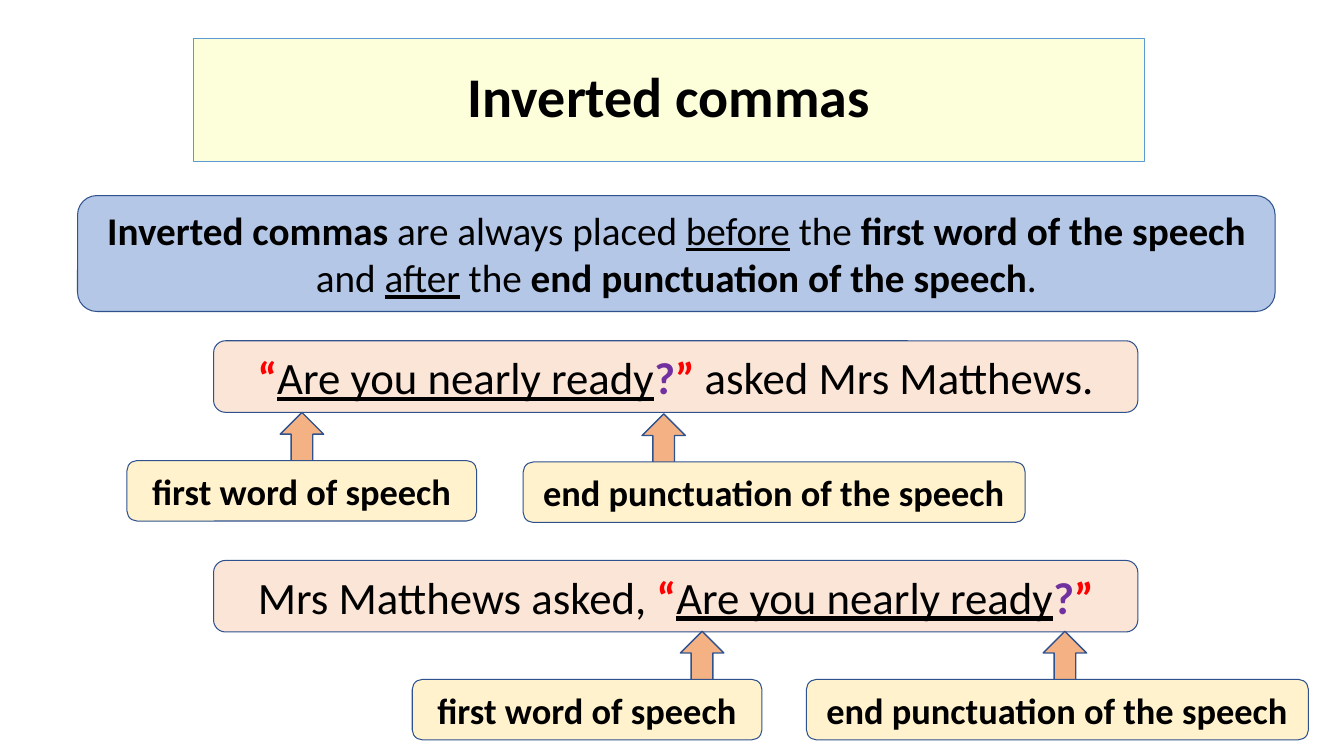
from pptx import Presentation
from pptx.dml.color import RGBColor
from pptx.enum.shapes import MSO_SHAPE as Shape
from pptx.enum.text import MSO_ANCHOR as Anchor, PP_ALIGN as Align
from pptx.util import Pt

BLACK, RED, PURPLE = "000000", "FF0000", "7030A0"
NAVY, BLUE, PEACH, CREAM, ORANGE = "2F528F", "B4C7E7", "FBE5D6", "FFF2CC", "F4B183"

# Each span is (text, bold, underlined, colour).
SPEECH = [
    ("“", True, False, RED),
    ("Are you nearly ready", False, True, BLACK),
    ("?", True, False, PURPLE),
    ("”", True, False, RED),
]
RULE = [
    ("Inverted commas ", True, False, BLACK),
    ("are always placed ", False, False, BLACK),
    ("before", False, True, BLACK),
    (" the ", False, False, BLACK),
    ("first word of the speech ", True, False, BLACK),
    ("and ", False, False, BLACK),
    ("after", False, True, BLACK),
    (" the ", False, False, BLACK),
    ("end punctuation of the speech", True, False, BLACK),
    (".", False, False, BLACK),
]


def colour(value):
    return RGBColor.from_string(value)


class Painter:
    """Holds the font and the slide being drawn."""

    def __init__(self, page, font="Calibri"):
        self.page = page
        self.font = font

    def paint(self, shape, fill, line, weight=0.75):
        shape.fill.solid()
        shape.fill.fore_color.rgb = colour(fill)
        shape.line.color.rgb = colour(line)
        shape.line.width = Pt(weight)

    def add_text(self, shape, spans, size):
        frame = shape.text_frame
        frame.word_wrap = True
        frame.vertical_anchor = Anchor.MIDDLE
        para = frame.paragraphs[0]
        para.alignment = Align.CENTER
        para.font.name = self.font
        para.font.size = Pt(size)
        for text, bold, underlined, tint in spans:
            span = para.add_run()
            span.text = text
            span.font.bold = bold
            span.font.underline = underlined
            span.font.color.rgb = colour(tint)

    def title(self, text, left, top, width, height):
        box = self.page.shapes.title
        box.left, box.top, box.width, box.height = map(Pt, (left, top, width, height))
        self.paint(box, "FDFEDA", "5B9BD5")
        self.add_text(box, [(text, True, False, BLACK)], 40)
        box.text_frame.paragraphs[0].line_spacing = 0.9

    def shape(self, kind, left, top, width, height, fill, weight=0.75):
        shape = self.page.shapes.add_shape(kind, *map(Pt, (left, top, width, height)))
        shape.shadow.inherit = False
        self.paint(shape, fill, NAVY, weight)
        return shape

    def panel(self, spans, size, left, top, width, height, fill):
        box = self.shape(Shape.ROUNDED_RECTANGLE, left, top, width, height, fill)
        self.add_text(box, spans, size)

    def pointer(self, text, left, top, width, arrow_left):
        """Draw a label with an arrow rising from behind its top edge."""
        self.shape(Shape.UP_ARROW, arrow_left, top - 34.4, 31, 35.3, ORANGE, 1)
        self.panel([(text, True, False, BLACK)], 26, left, top, width, 43.2, CREAM)


def main():
    deck = Presentation()
    deck.slide_width, deck.slide_height = Pt(960), Pt(540)
    painter = Painter(deck.slides.add_slide(deck.slide_layouts[5]))

    painter.title("Inverted commas", 138.2, 27.4, 679, 87.8)
    painter.panel(RULE, 28, 55.4, 139.7, 855.4, 82.8, BLUE)

    asked_after = SPEECH + [(" asked Mrs Matthews.", False, False, BLACK)]
    asked_before = [("Mrs Matthews asked, ", False, False, BLACK)] + SPEECH
    for spans, top in ((asked_after, 243.4), (asked_before, 400.3)):
        painter.panel(spans, 32, 152.6, top, 660.2, 51.1, PEACH)

    first, end = "first word of speech", "end punctuation of the speech"
    for text, left, top, width, arrow_left in (
        (first, 90.7, 329, 249.8, 200.2),
        (end, 373.7, 330, 358.6, 458.6),
        (first, 294.5, 485.3, 249.8, 486),
        (end, 576, 485.3, 358.6, 745.2),
    ):
        painter.pointer(text, left, top, width, arrow_left)

    deck.save("out.pptx")


if __name__ == "__main__":
    main()
